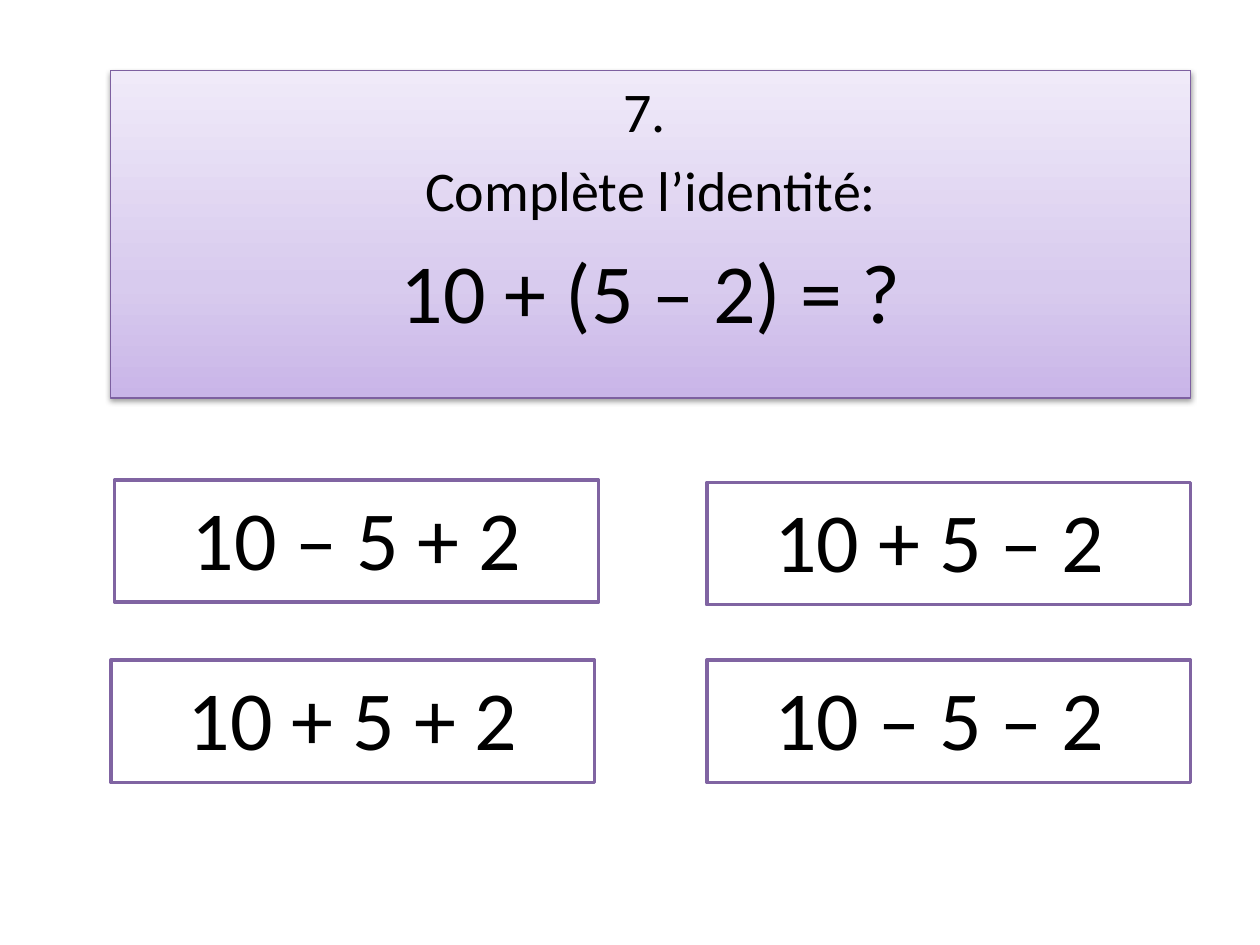
from lxml import etree
from pptx import Presentation
from pptx import util as u
from pptx.dml.color import RGBColor
from pptx.enum import shapes, text
from pptx.oxml import ns

WIDTH, HEIGHT = 10, 7.5
LEFT, RIGHT = 0.88, 9.45
ANSWER_W, ANSWER_H = 3.84, 0.97
COLUMNS = (LEFT, RIGHT - ANSWER_W)
ROWS = (3.83, 5.24)

BLACK = RGBColor(0x00, 0x00, 0x00)
WHITE = RGBColor(0xFF, 0xFF, 0xFF)
PURPLE = RGBColor(0x80, 0x64, 0xA2)
BORDER = RGBColor(0x7D, 0x60, 0xA0)
GRADIENT = (
    (0, RGBColor(0xC9, 0xB5, 0xE8)),
    (35, RGBColor(0xD8, 0xCB, 0xEE)),
    (100, RGBColor(0xF0, 0xEA, 0xF9)),
)

QUESTION = (("7. ", 32), ("Complète l’identité:", 32), ("10 + (5 – 2) = ?", 48))
# text, column, row, small shift (right, down) from the grid
ANSWERS = (
    ("10 – 5 + 2", 0, 0, (0.03, -0.02)),
    ("10 + 5 – 2 ", 1, 0, (0, 0)),
    ("10 + 5 + 2", 0, 1, (0, 0)),
    ("10 – 5 – 2 ", 1, 1, (0, 0)),
)


def add_box(slide, left, top, width, height, lines, border, border_pt):
    """Add a white bordered rectangle with centred (text, size) lines."""
    s = slide.shapes.add_shape(
        shapes.MSO_SHAPE.RECTANGLE, *map(u.Inches, (left, top, width, height)))
    s.shadow.inherit = False
    s.fill.solid()
    s.fill.fore_color.rgb = WHITE
    s.line.color.rgb = border
    s.line.width = u.Pt(border_pt)
    tf = s.text_frame
    tf.word_wrap = True
    tf.vertical_anchor = text.MSO_ANCHOR.TOP
    for i, (line, size) in enumerate(lines):
        p = tf.add_paragraph() if i else tf.paragraphs[0]
        p.text = line
        p.alignment = text.PP_ALIGN.CENTER
        p.space_before = u.Pt(0.2 * size)
        p.font.name = "Calibri"
        p.font.size = u.Pt(size)
        p.font.color.rgb = BLACK
    return s


def sub(parent, tag, **attrs):
    return etree.SubElement(
        parent, ns.qn(tag), {k: str(v) for k, v in attrs.items()})


def set_gradient(s, stops, angle):
    s.fill.gradient()
    grad = s.element.spPr.find(ns.qn("a:gradFill"))
    for child in list(grad):
        grad.remove(child)
    stop_list = sub(grad, "a:gsLst")
    for percent, color in stops:
        stop = sub(stop_list, "a:gs", pos=percent * 1000)
        sub(stop, "a:srgbClr", val=color)
    sub(grad, "a:lin", ang=angle * 60000, scaled=0)


def add_shadow(s, color, opacity, blur, distance, angle):
    effects = s.element.spPr.find(ns.qn("a:effectLst"))
    shadow = sub(effects, "a:outerShdw", blurRad=u.Pt(blur), dist=u.Pt(distance),
                 dir=angle * 60000, rotWithShape=0)
    sub(sub(shadow, "a:srgbClr", val=color), "a:alpha", val=opacity * 1000)


def add_question(slide):
    s = add_box(slide, LEFT, 0.56, RIGHT - LEFT, 2.6, QUESTION, BORDER, 0.75)
    set_gradient(s, GRADIENT, 270)
    add_shadow(s, BLACK, opacity=38, blur=3.1, distance=1.6, angle=90)


def add_answers(slide):
    for answer, col, row, (dx, dy) in ANSWERS:
        add_box(slide, COLUMNS[col] + dx, ROWS[row] + dy, ANSWER_W, ANSWER_H,
                [(answer, 48)], PURPLE, 2)


def main():
    prs = Presentation()
    prs.slide_width, prs.slide_height = u.Inches(WIDTH), u.Inches(HEIGHT)
    slide = prs.slides.add_slide(prs.slide_layouts[6])
    add_question(slide)
    add_answers(slide)
    prs.save("out.pptx")


if __name__ == "__main__":
    main()
